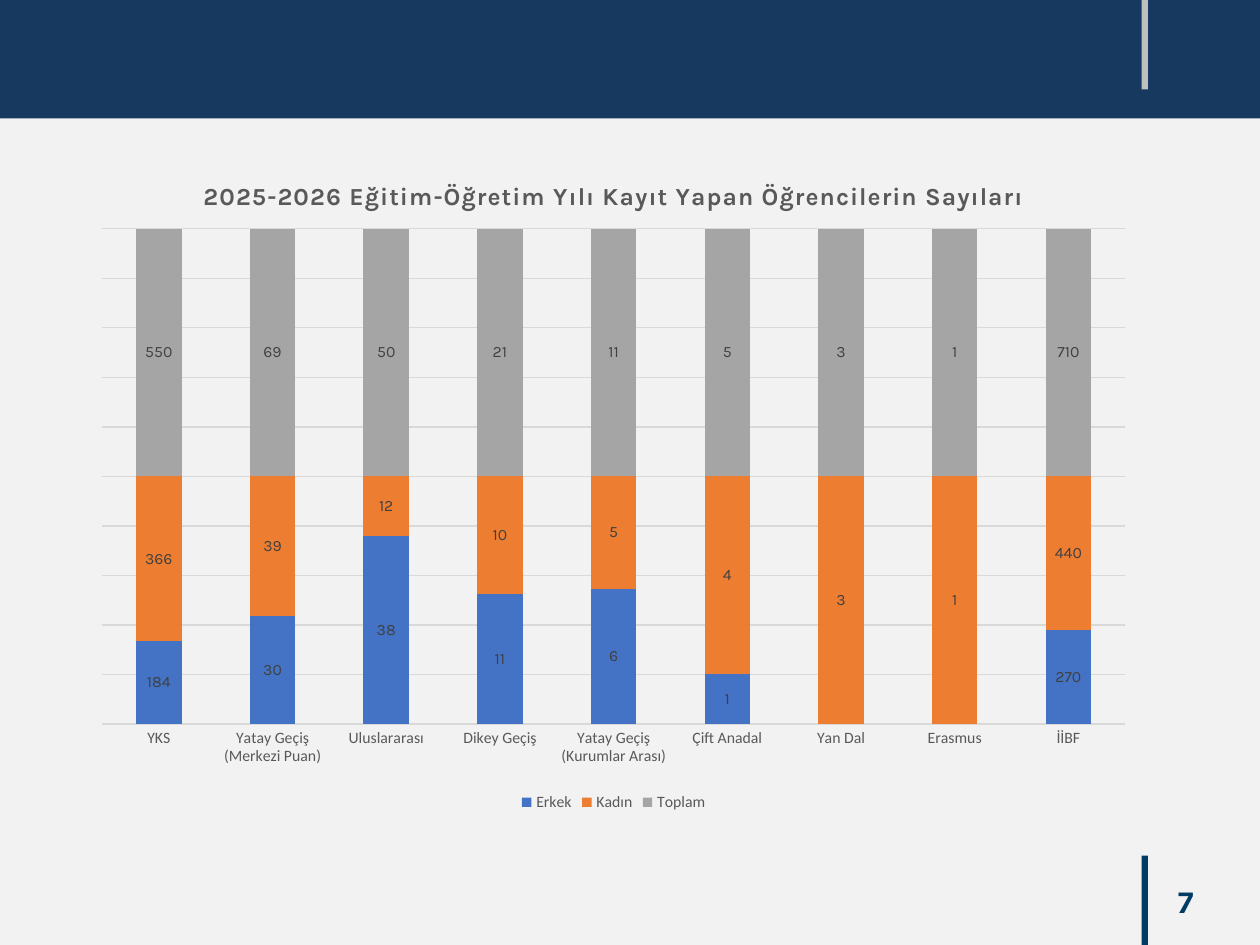
"""Builds the slide on student registrations in 2025-2026."""
from lxml.etree import SubElement
from pptx import Presentation
from pptx.chart.data import CategoryChartData
from pptx.dml.color import RGBColor
from pptx.enum.chart import XL_CHART_TYPE, XL_LEGEND_POSITION, XL_TICK_MARK
from pptx.enum.shapes import MSO_SHAPE
from pptx.enum.text import MSO_ANCHOR, PP_ALIGN
from pptx.oxml.ns import qn
from pptx.util import Inches, Pt

PAPER = RGBColor(0xF2, 0xF2, 0xF2)
BAND = RGBColor(0x17, 0x39, 0x60)
NAVY = RGBColor(0x00, 0x3B, 0x64)
SILVER = RGBColor(0xBF, 0xBF, 0xBF)
GRID = RGBColor(0xD9, 0xD9, 0xD9)
GREY = RGBColor(0x59, 0x59, 0x59)
DARK = RGBColor(0x40, 0x40, 0x40)
BLUE = RGBColor(0x44, 0x72, 0xC4)
ORANGE = RGBColor(0xED, 0x7D, 0x31)
ASH = RGBColor(0xA5, 0xA5, 0xA5)

TITLE = "2025-2026 Eğitim-Öğretim Yılı Kayıt Yapan Öğrencilerin Sayıları"
GROUPS = ["YKS", "Yatay Geçiş (Merkezi Puan)", "Uluslararası", "Dikey Geçiş",
          "Yatay Geçiş (Kurumlar Arası)", "Çift Anadal", "Yan Dal", "Erasmus", "İİBF"]
SERIES = [
    ("Erkek", BLUE, [184, 30, 38, 11, 6, 1, None, None, 270]),
    ("Kadın", ORANGE, [366, 39, 12, 10, 5, 4, 3, 1, 440]),
    ("Toplam", ASH, [550, 69, 50, 21, 11, 5, 3, 1, 710]),
]


def set_font(font, name, size, color, bold=False):
    font.name, font.size, font.bold = name, Pt(size), bold
    font.color.rgb = color


def add_bar(slide, left, top, width, height, color):
    bar = slide.shapes.add_shape(MSO_SHAPE.RECTANGLE, Inches(left), Inches(top),
                                 Inches(width), Inches(height))
    bar.shadow.inherit = False
    bar.fill.solid()
    bar.fill.fore_color.rgb = color
    bar.line.fill.background()


def add_number(slide, text):
    box = slide.shapes.add_textbox(Inches(7.32), Inches(6.95), Inches(2.25), Inches(0.4))
    frame = box.text_frame
    frame.word_wrap = True
    frame.vertical_anchor = MSO_ANCHOR.MIDDLE
    frame.text = text
    line = frame.paragraphs[0]
    line.alignment = PP_ALIGN.RIGHT
    set_font(line.runs[0].font, "Karla", 18, NAVY, True)


def set_title(chart):
    chart.has_title = True
    chart.chart_title.include_in_layout = False
    frame = chart.chart_title.text_frame
    frame.text = TITLE
    font = frame.paragraphs[0].runs[0].font
    set_font(font, "Karla", 14, GREY, True)
    frame.paragraphs[0].runs[0]._r.get_or_add_rPr().set("spc", "50")


def set_axes(chart):
    groups, values = chart.category_axis, chart.value_axis
    groups.major_tick_mark = XL_TICK_MARK.NONE
    set_font(groups.tick_labels.font, "Calibri", 9, GREY)
    values.visible = False
    values.has_major_gridlines = True
    for line in (groups.format.line, values.major_gridlines.format.line):
        line.color.rgb = GRID
        line.width = Pt(0.75)


def set_plot(chart):
    plot = chart.plots[0]
    plot.gap_width, plot.overlap = 150, 100
    plot.vary_by_categories = False
    for series, (_, color, _) in zip(plot.series, SERIES):
        series.format.fill.solid()
        series.format.fill.fore_color.rgb = color
        labels = series.data_labels
        labels.show_value = True
        set_font(labels.font, "Karla", 9, DARK)


def place_plot(chart, **area):
    zone = chart._chartSpace.chart.plotArea
    layout = zone.find(qn("c:layout"))
    if layout is None:
        layout = zone.makeelement(qn("c:layout"))
        zone.insert(0, layout)
    manual = SubElement(layout, qn("c:manualLayout"))
    parts = {"layoutTarget": "inner", "xMode": "edge", "yMode": "edge", **area}
    for tag, value in parts.items():
        SubElement(manual, qn(f"c:{tag}")).set("val", str(value))


def add_counts(slide):
    data = CategoryChartData()
    data.categories = GROUPS
    for name, _, values in SERIES:
        data.add_series(name, values)
    chart = slide.shapes.add_chart(XL_CHART_TYPE.COLUMN_STACKED_100, Inches(0.64),
                                   Inches(1.24), Inches(8.46), Inches(5.24), data).chart
    chart.font.name, chart.font.size = "Calibri", Pt(10)
    set_title(chart)
    set_axes(chart)
    set_plot(chart)
    place_plot(chart, x=0.02, y=0.11, w=0.96, h=0.75)
    chart.has_legend = True
    chart.legend.position = XL_LEGEND_POSITION.BOTTOM
    chart.legend.include_in_layout = False
    set_font(chart.legend.font, "Calibri", 9, GREY)


def main():
    deck = Presentation()
    deck.slide_width, deck.slide_height = Inches(10), Inches(7.5)
    slide = deck.slides.add_slide(deck.slide_layouts[6])
    slide.background.fill.solid()
    slide.background.fill.fore_color.rgb = PAPER
    add_bar(slide, 0, 0, 10, 0.94, BAND)
    add_bar(slide, 9.06, 6.79, 0.05, 0.71, NAVY)
    add_bar(slide, 9.06, 0, 0.05, 0.71, SILVER)
    add_number(slide, "7")
    add_counts(slide)
    deck.save("out.pptx")


if __name__ == "__main__":
    main()
